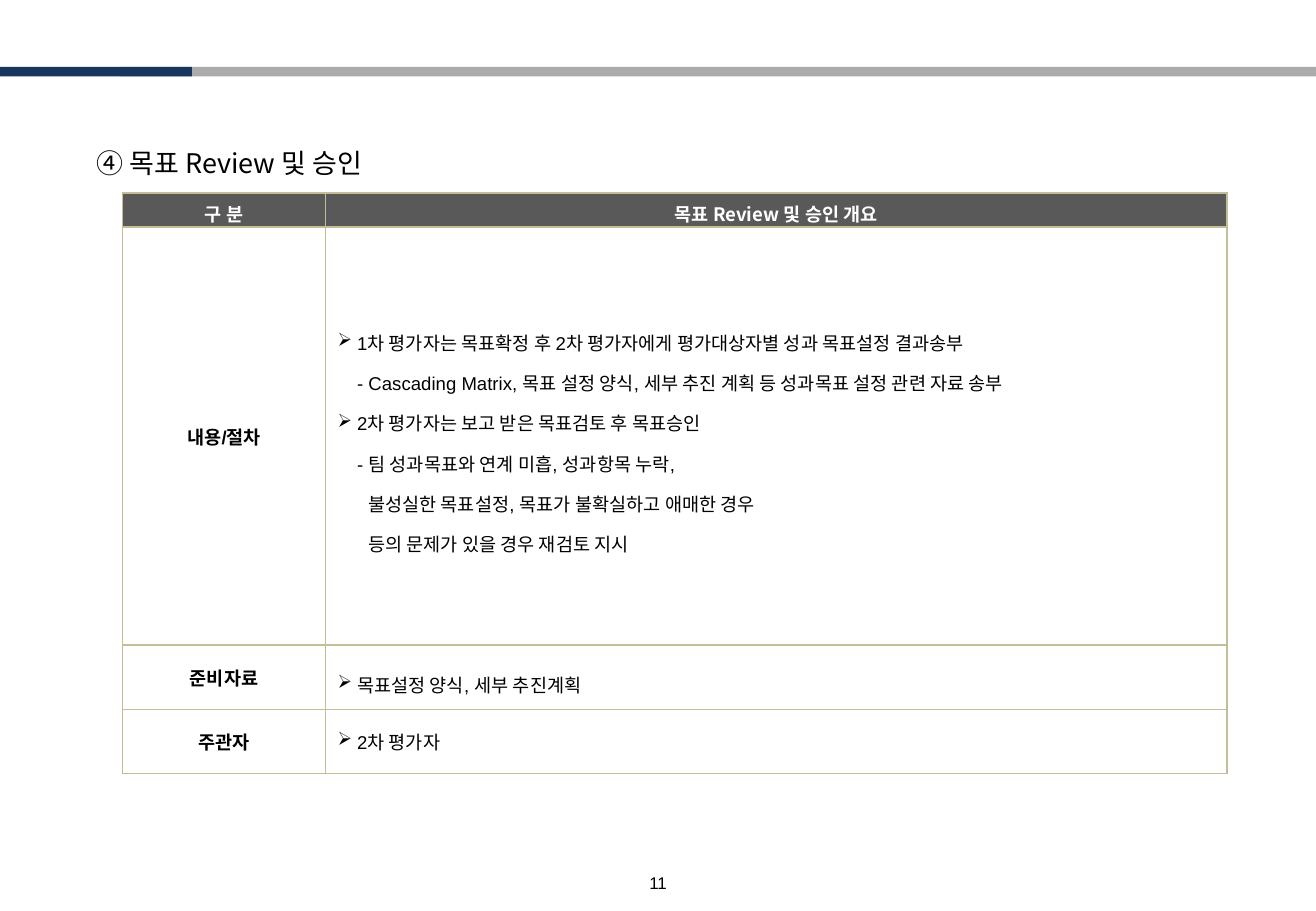
from lxml import etree
from pptx import Presentation
from pptx import util as u
from pptx.dml.color import RGBColor
from pptx.enum import shapes, text
from pptx.oxml.ns import qn

NAVY = RGBColor(0x17, 0x37, 0x5E)
SILVER = RGBColor(0xAB, 0xAB, 0xAB)
CHARCOAL = RGBColor(0x59, 0x59, 0x59)
SAND = RGBColor(0xC4, 0xBD, 0x97)
BLACK = RGBColor(0, 0, 0)
WHITE = RGBColor(0xFF, 0xFF, 0xFF)

LATIN, KOREAN = "Arial", "Noto Sans CJK KR"
GRID_COLUMNS, GRID_ROWS = 65, 45
CENTER = text.PP_ALIGN.CENTER

HEADER = ["구 분", "목표 Review 및 승인 개요"]
# Each line is (text, indent in inches, has a bullet).
BULLET_INDENT, CONTINUED_INDENT = 0.16, 0.25
SECTIONS = [
    ("내용/절차", 1.5, [
        ("1차 평가자는 목표확정 후 2차 평가자에게 평가대상자별 성과 목표설정 결과송부",
         BULLET_INDENT, True),
        ("- Cascading Matrix, 목표 설정 양식, 세부 추진 계획 등 성과목표 설정 관련 자료 송부",
         BULLET_INDENT, False),
        ("2차 평가자는 보고 받은 목표검토 후 목표승인", BULLET_INDENT, True),
        ("- 팀 성과목표와 연계 미흡, 성과항목 누락,", BULLET_INDENT, False),
        ("불성실한 목표설정, 목표가 불확실하고 애매한 경우", CONTINUED_INDENT, False),
        ("등의 문제가 있을 경우 재검토 지시", CONTINUED_INDENT, False),
    ]),
    ("준비자료", 1.5, [("목표설정 양식, 세부 추진계획", BULLET_INDENT, True)]),
    ("주관자", None, [("2차 평가자", BULLET_INDENT, True)]),
]


def write(paragraph, words, size=11, font=LATIN, color=BLACK, bold=False,
          align=None, spacing=None, indent=0, bullet=False):
    run = paragraph.add_run()
    run.text = words
    run.font.size, run.font.name, run.font.bold = u.Pt(size), font, bold
    run.font.color.rgb = color
    latin = run.font._element.find(qn("a:latin"))
    east_asian = etree.Element(qn("a:ea"), typeface=KOREAN)
    latin.addnext(east_asian)
    paragraph.alignment = align
    paragraph.line_spacing = spacing
    properties = paragraph._p.get_or_add_pPr()
    if indent:
        properties.set("marL", str(u.Inches(indent)))
    if bullet:
        properties.set("indent", str(-u.Inches(indent)))
        etree.SubElement(properties, qn("a:buChar"), char="➢")


def draw_borders(cell, color=SAND, width=1):
    properties = cell._tc.get_or_add_tcPr()
    for side in ("lnL", "lnR", "lnT", "lnB"):
        line = etree.SubElement(properties, qn(f"a:{side}"), w=str(u.Pt(width)))
        fill = etree.SubElement(line, qn("a:solidFill"))
        etree.SubElement(fill, qn("a:srgbClr"), val=str(color))


class GridSlide:
    """A blank slide whose lengths are given in grid columns and rows."""

    def __init__(self, presentation):
        self.slide = presentation.slides.add_slide(presentation.slide_layouts[6])
        self.column = presentation.slide_width / GRID_COLUMNS
        self.row = presentation.slide_height / GRID_ROWS

    def box(self, left, top, width, height):
        return (round(left * self.column), round(top * self.row),
                round(width * self.column), round(height * self.row))

    def bar(self, left, top, width, height, color):
        shape = self.slide.shapes.add_shape(
            shapes.MSO_SHAPE.RECTANGLE, *self.box(left, top, width, height))
        shape.shadow.inherit = False
        shape.fill.solid()
        shape.fill.fore_color.rgb = color
        shape.line.fill.background()

    def label(self, words, left, top, width, height, bottom_inset=0.05, **style):
        """Add text that rests on the bottom of its box."""
        frame = self.slide.shapes.add_textbox(
            *self.box(left, top, width, height)).text_frame
        frame.word_wrap = True
        frame.vertical_anchor = text.MSO_ANCHOR.BOTTOM
        frame.margin_bottom = u.Inches(bottom_inset)
        write(frame.paragraphs[0], words, **style)

    def table(self, left, top, widths, heights):
        table = self.slide.shapes.add_table(
            len(heights), len(widths),
            *self.box(left, top, sum(widths), sum(heights))).table
        table.horz_banding = False
        for column, width in zip(table.columns, widths):
            column.width = round(width * self.column)
        for row, height in zip(table.rows, heights):
            row.height = round(height * self.row)
        return table

    def cell(self, cell, lines, fill=None, **style):
        """Fill a cell with (text, indent, bullet) lines."""
        draw_borders(cell)
        cell.vertical_anchor = text.MSO_ANCHOR.MIDDLE
        if fill is None:
            cell.fill.background()
        else:
            cell.fill.solid()
            cell.fill.fore_color.rgb = fill
            cell.margin_bottom = 0
        frame = cell.text_frame
        for number, (words, indent, bullet) in enumerate(lines):
            paragraph = frame.add_paragraph() if number else frame.paragraphs[0]
            write(paragraph, words, indent=indent, bullet=bullet, **style)


def main():
    presentation = Presentation()
    presentation.slide_width = u.Inches(10.83)
    presentation.slide_height = u.Inches(7.5)
    page = GridSlide(presentation)

    page.bar(5.94, 3.3, 59.06, 0.48, SILVER)
    page.bar(0, 3.3, 9.48, 0.48, NAVY)
    page.label("11", 25.5, 42.84, 14, 1.26, bottom_inset=0,
               size=10, align=CENTER, spacing=0.7)
    page.label("④ 목표 Review 및 승인", 1.8, 4.5, 61.46, 4.62,
               size=16, font=KOREAN, indent=0.4)

    table = page.table(6.06, 9.54, widths=[10.02, 44.52],
                       heights=[1.68, 20.64, 3.18, 3.18])
    for column, heading in enumerate(HEADER):
        page.cell(table.cell(0, column), [(heading, 0, False)], fill=CHARCOAL,
                  font=KOREAN, color=WHITE, bold=True, align=CENTER)
    for row, (name, spacing, lines) in enumerate(SECTIONS, start=1):
        page.cell(table.cell(row, 0), [(name, 0, False)], bold=True, align=CENTER)
        page.cell(table.cell(row, 1), lines, spacing=spacing)

    presentation.save("out.pptx")


if __name__ == "__main__":
    main()
